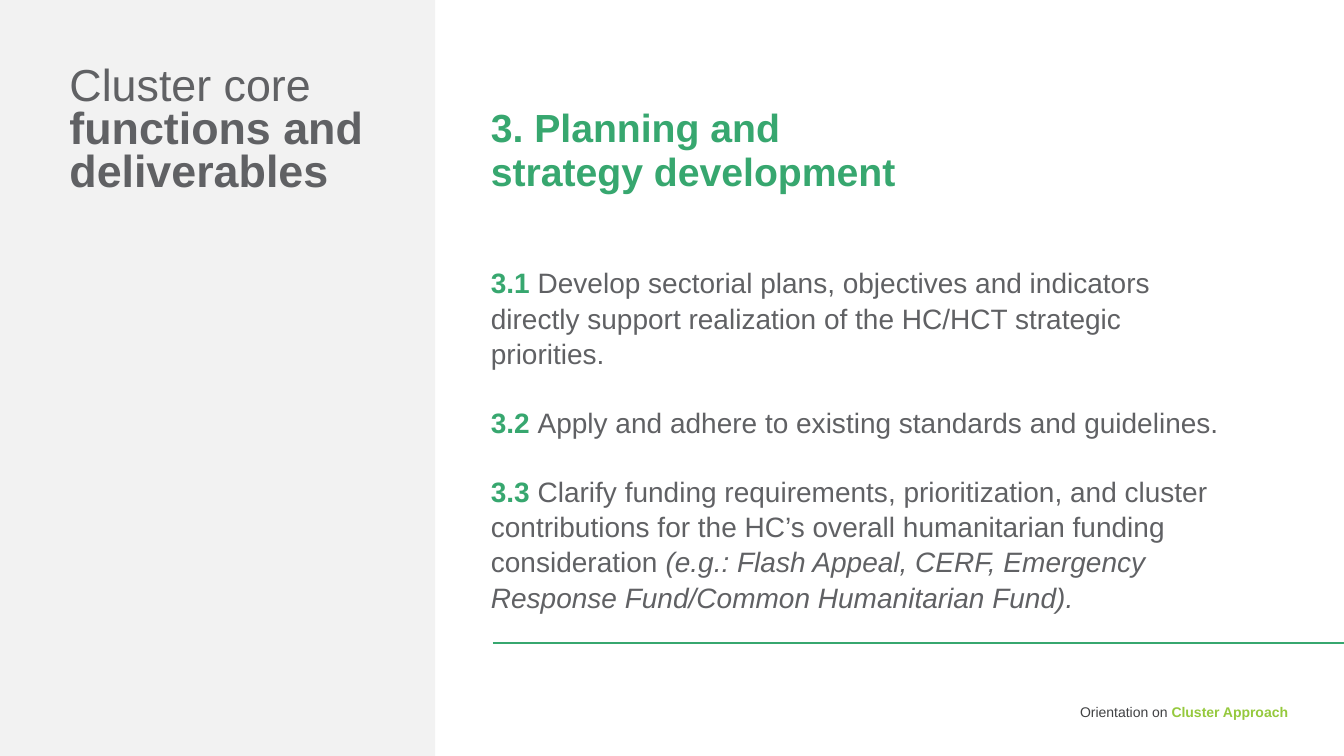
from pptx import Presentation
from pptx.dml.color import RGBColor
from pptx.enum.shapes import MSO_CONNECTOR, MSO_SHAPE
from pptx.enum.text import MSO_ANCHOR, MSO_AUTO_SIZE, PP_ALIGN
from pptx.oxml.ns import qn
from pptx.util import Cm, Pt
from lxml.etree import SubElement

GREEN, GREY = "37A76F", "606164"


def write(para, text, size=20, color=GREY, bold=False, italic=False):
    run = para.add_run()
    run.text = text
    font = run.font
    font.name, font.size = "Arial", Pt(size)
    font.bold, font.italic = bold, italic
    font.color.rgb = RGBColor.from_string(color)


def place(shape, left, top, width, height, inset=(0, 0.13, 0.25, 0.13)):
    """Set a text shape's box in cm and its insets; return its text frame."""
    shape.left, shape.top = Cm(left), Cm(top)
    shape.width, shape.height = Cm(width), Cm(height)
    frame = shape.text_frame
    frame.margin_left, frame.margin_top, frame.margin_right, frame.margin_bottom = map(Cm, inset)
    frame.word_wrap = True
    frame.auto_size = MSO_AUTO_SIZE.NONE
    return frame


deck = Presentation()
deck.slide_width, deck.slide_height = Cm(33.87), Cm(19.05)
slide = deck.slides.add_slide(deck.slide_layouts[1])
shapes = slide.shapes
title, body = shapes.title, slide.placeholders[1]

# Side panel, behind the title
panel = shapes.add_shape(MSO_SHAPE.RECTANGLE, 0, 0, Cm(10.97), deck.slide_height)
panel.shadow.inherit = False
panel.fill.solid()
panel.fill.fore_color.rgb = RGBColor.from_string("F2F2F2")
panel.line.fill.background()
title.element.addprevious(panel.element)

# Title
frame = place(title, 1.75, 1.68, 8.56, 3.28)
frame.vertical_anchor = MSO_ANCHOR.MIDDLE
para = frame.paragraphs[0]
para.alignment = PP_ALIGN.LEFT
para.line_spacing = 0.8
write(para, "Cluster core", size=32)
para.add_line_break()
write(para, "functions and deliverables", size=32, bold=True)

# Section heading
frame = place(shapes.add_textbox(0, 0, 0, 0), 12.37, 2.59, 19.63, 2.49)
for i, text in enumerate(("3. Planning and", "strategy development")):
    para = frame.add_paragraph() if i else frame.paragraphs[0]
    para.line_spacing = 0.93
    write(para, text, size=28, color=GREEN, bold=True)

# Numbered points
points = (
    ("Develop sectorial plans, objectives and indicators directly support "
     "realization of the HC/HCT strategic priorities.", ""),
    ("Apply and adhere to existing standards and guidelines.", ""),
    ("Clarify funding requirements, prioritization, and cluster contributions "
     "for the HC’s overall humanitarian funding consideration ",
     "(e.g.: Flash Appeal, CERF, Emergency Response Fund/Common Humanitarian Fund)."),
)
frame = place(body, 12.37, 6.53, 18.87, 8.61)
frame.vertical_anchor = MSO_ANCHOR.TOP
for i, (text, note) in enumerate(points):
    para = frame.add_paragraph() if i else frame.paragraphs[0]
    props = para._p.get_or_add_pPr()
    props.set("marL", "0")
    props.set("indent", "0")
    SubElement(props, qn("a:buNone"))
    para.line_spacing = 1.05
    para.space_before = Pt(24 if i else 0)
    write(para, f"3.{i + 1} ", color=GREEN, bold=True)
    write(para, text)
    if note:
        write(para, note, italic=True)

# Rule
rule = shapes.add_connector(MSO_CONNECTOR.STRAIGHT, Cm(12.42), Cm(16.2), deck.slide_width, Cm(16.2))
rule.line.color.rgb = RGBColor.from_string(GREEN)
rule.line.width = Pt(1.5)
SubElement(rule.element.spPr, qn("a:effectLst"))

# Footer
frame = place(shapes.add_textbox(0, 0, 0, 0), 25.17, 17.55, 7.29, 0.66, (0.25, 0.25, 0, 0.25))
para = frame.paragraphs[0]
para.alignment = PP_ALIGN.RIGHT
para.line_spacing = 0.8
write(para, "Orientation on ", size=10, color="404143")
write(para, "Cluster Approach", size=10, color="95C93D", bold=True)

deck.save("out.pptx")
